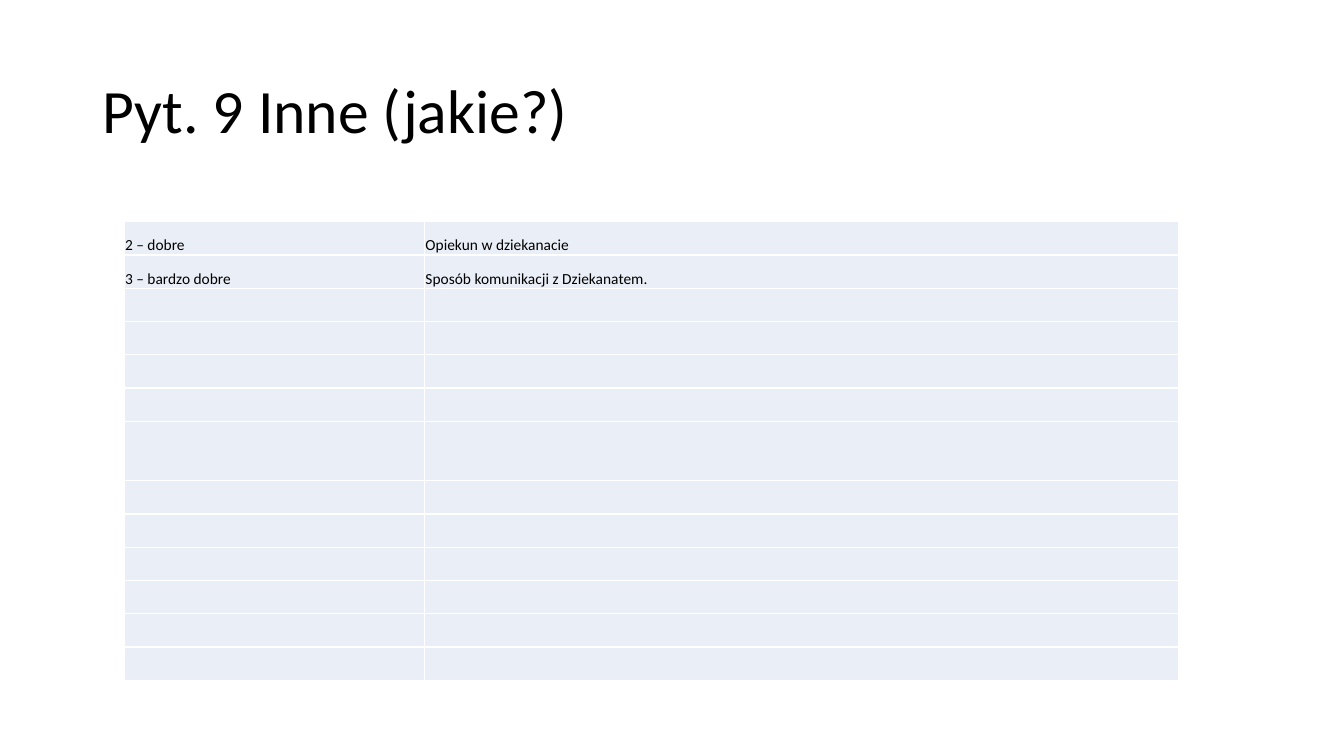
import pptx
import pptx.dml.color
import pptx.enum.text
import pptx.oxml
import pptx.oxml.ns
import pptx.util

Inches = pptx.util.Inches
Pt = pptx.util.Pt
ANCHOR = pptx.enum.text.MSO_ANCHOR


def style(par, size, color):
    par.font.name = "Calibri"
    par.font.size = Pt(size)
    par.font.bold = False
    par.font.color.rgb = pptx.dml.color.RGBColor.from_string(color)


def edge(cell, color):
    """Draw a 1 pt line on all four sides of a cell; call before filling it."""
    props = cell._tc.get_or_add_tcPr()
    for side in ("lnL", "lnR", "lnT", "lnB"):
        props.append(pptx.oxml.parse_xml(
            f'<a:{side} {pptx.oxml.ns.nsdecls("a")} w="{Pt(1)}"><a:solidFill>'
            f'<a:srgbClr val="{color}"/></a:solidFill></a:{side}>'))


deck = pptx.Presentation()
deck.slide_width = Inches(13.33)
deck.slide_height = Inches(7.5)
slide = deck.slides.add_slide(deck.slide_layouts[6])

# Title
title = slide.shapes.add_textbox(Inches(0.92), Inches(0.4), Inches(11.5), Inches(1.45))
frame = title.text_frame
frame.word_wrap = True
frame.vertical_anchor = ANCHOR.MIDDLE
par = frame.paragraphs[0]
par.text = "Pyt. 9 Inne (jakie?)"
par.line_spacing = 0.9
style(par, 44, "000000")

# Answers, followed by empty rows
answers = [
    ("2 – dobre", "Opiekun w dziekanacie"),
    ("3 – bardzo dobre", "Sposób komunikacji z Dziekanatem."),
]
widths = [2.98, 7.48]
heights = [0.33] * 6 + [0.59] + [0.33] * 6
rows = answers + [("", "")] * (len(heights) - len(answers))

table = slide.shapes.add_table(
    len(rows), len(widths), Inches(1.23), Inches(2.2),
    Inches(sum(widths)), Inches(sum(heights))).table
table.first_row = False
table.horz_banding = False
for col, width in zip(table.columns, widths):
    col.width = Inches(width)

for row, height, texts in zip(table.rows, heights, rows):
    row.height = Inches(height)
    for cell, text in zip(row.cells, texts):
        cell.margin_left = cell.margin_right = cell.margin_top = Inches(0.01)
        cell.margin_bottom = 0
        cell.vertical_anchor = ANCHOR.BOTTOM
        edge(cell, "FFFFFF")
        cell.fill.solid()
        cell.fill.fore_color.rgb = pptx.dml.color.RGBColor.from_string("EAEFF7")
        par = cell.text_frame.paragraphs[0]
        if text:
            par.text = text
        style(par, 11, "000000")

deck.save("out.pptx")
